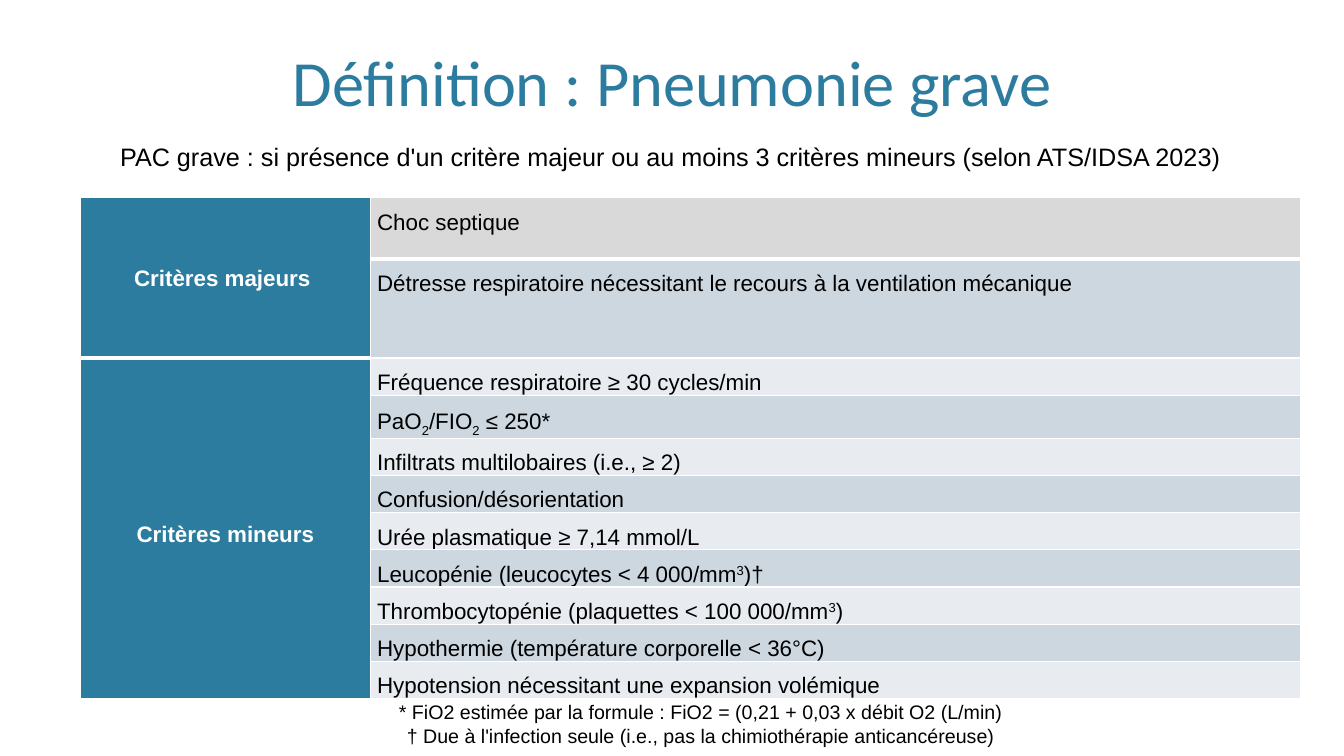
from lxml import etree
from pptx import Presentation
from pptx.dml.color import RGBColor
from pptx.enum import text as t
from pptx.oxml.ns import qn
from pptx.util import Pt

COLORS = {
    "teal": "2C7C9F",
    "black": "000000",
    "white": "FFFFFF",
    "grey": "D9D9D9",
    "odd_band": "CDD7DF",
    "even_band": "E8ECF0",
}
SUBSCRIPT, SUPERSCRIPT = -25000, 30000

MAJOR = [
    ["Choc septique"],
    ["Détresse respiratoire nécessitant le recours à la ventilation mécanique"],
]
MINOR = [
    ["Fréquence respiratoire ≥ 30 cycles/min"],
    ["PaO", ("2", SUBSCRIPT), "/FIO", ("2", SUBSCRIPT), " ≤ 250*"],
    ["Infiltrats multilobaires (i.e., ≥ 2)"],
    ["Confusion/désorientation"],
    ["Urée plasmatique ≥ 7,14 mmol/L"],
    ["Leucopénie (leucocytes < 4 000/mm", ("3", SUPERSCRIPT), ")†"],
    ["Thrombocytopénie (plaquettes < 100 000/mm", ("3", SUPERSCRIPT), ")"],
    ["Hypothermie (température corporelle < 36°C)"],
    ["Hypotension nécessitant une expansion volémique"],
]
MAJOR_HEIGHTS = [43.6, 71]
MINOR_HEIGHT, SUBSCRIPT_ROW_HEIGHT = 26.6, 30.6
MAJOR_SPACING, MINOR_SPACING = 1.5, 1.38


def rgb(color):
    return RGBColor.from_string(COLORS[color])


def style(paragraph, size, color, font="Arial", bold=False, align=t.PP_ALIGN.CENTER):
    paragraph.alignment = align
    paragraph.font.name = font
    paragraph.font.size = Pt(size)
    paragraph.font.bold = bold
    paragraph.font.color.rgb = rgb(color)


def add_text(slide, box, lines, size, color="black", font="Arial",
             anchor=t.MSO_ANCHOR.TOP):
    frame = slide.shapes.add_textbox(*map(Pt, box)).text_frame
    frame.word_wrap = True
    frame.vertical_anchor = anchor
    frame.text = "\n".join(lines)
    for paragraph in frame.paragraphs:
        style(paragraph, size, color, font)


def set_borders(cell, bottom):
    """Draw white cell borders, 1 pt wide except for the bottom one."""
    properties = cell._tc.get_or_add_tcPr()
    for side, width in (("L", 1), ("R", 1), ("T", 1), ("B", bottom)):
        line = etree.SubElement(properties, qn(f"a:ln{side}"), w=str(Pt(width)))
        fill = etree.SubElement(line, qn("a:solidFill"))
        etree.SubElement(fill, qn("a:srgbClr"), val=COLORS["white"])


def fill_cell(cell, parts, fill, spacing, **text_style):
    """Write text parts; a (text, baseline) pair is raised or lowered."""
    cell.fill.solid()
    cell.fill.fore_color.rgb = rgb(fill)
    cell.margin_left = cell.margin_right = Pt(5)
    cell.margin_top = cell.margin_bottom = 0
    paragraph = cell.text_frame.paragraphs[0]
    paragraph.line_spacing = spacing
    style(paragraph, 16, **text_style)
    for part in parts:
        content, baseline = (part, 0) if isinstance(part, str) else part
        run = paragraph.add_run()
        run.text = content
        if baseline:
            run._r.get_or_add_rPr().set("baseline", str(baseline))


def add_category(table, first, last, label, lift=0):
    """Merge the left cells of a group; lift is its bottom margin."""
    cell = table.cell(first, 0)
    cell.merge(table.cell(last, 0))
    fill_cell(cell, [label], "teal", MAJOR_SPACING, color="white", bold=True)
    cell.vertical_anchor = t.MSO_ANCHOR.MIDDLE
    cell.margin_bottom = Pt(lift)


def add_criteria_table(slide):
    criteria = MAJOR + MINOR
    heights = MAJOR_HEIGHTS + [
        SUBSCRIPT_ROW_HEIGHT if len(parts) > 3 else MINOR_HEIGHT for parts in MINOR
    ]
    widths = [206.8, 664.4]
    table = slide.shapes.add_table(
        len(criteria), 2, Pt(57.6), Pt(141.2), Pt(sum(widths)), Pt(sum(heights))
    ).table
    table.first_row = table.horz_banding = False
    for column, width in zip(table.columns, widths):
        column.width = Pt(width)
    for index, (parts, height) in enumerate(zip(criteria, heights)):
        is_major = index < len(MAJOR)
        table.rows[index].height = Pt(height)
        category, criterion = table.rows[index].cells
        set_borders(category, 3 if is_major else 1)
        if index == 0:
            set_borders(criterion, 3)
        band = "odd_band" if index % 2 else "even_band"
        fill_cell(criterion, parts, band if index else "grey",
                  MAJOR_SPACING if is_major else MINOR_SPACING,
                  color="black", align=t.PP_ALIGN.LEFT)
        if not is_major:
            criterion.vertical_anchor = t.MSO_ANCHOR.BOTTOM
    add_category(table, 0, len(MAJOR) - 1, "Critères majeurs ", lift=8)
    add_category(table, len(MAJOR), len(criteria) - 1, "Critères mineurs")


def main():
    deck = Presentation()
    deck.slide_width, deck.slide_height = Pt(960), Pt(540)
    slide = deck.slides.add_slide(deck.slide_layouts[6])
    add_text(slide, (57.6, 8.6, 844.6, 80.6), ["Définition : Pneumonie grave"],
             46, "teal", "Calibri", t.MSO_ANCHOR.BOTTOM)
    add_criteria_table(slide)
    add_text(slide, (73.4, 496.4, 854.6, 41), [
        "* FiO2 estimée par la formule\u00a0: FiO2 = (0,21 + 0,03 x débit O2 (L/min)",
        "† Due à l'infection seule (i.e., pas la chimiothérapie anticancéreuse)",
    ], 14)
    add_text(slide, (13.7, 97.2, 935.3, 28.8), [
        "PAC grave : si présence d'un critère majeur ou au moins 3 critères mineurs "
        "(selon ATS/IDSA 2023) ",
    ], 18)
    deck.save("out.pptx")


if __name__ == "__main__":
    main()
